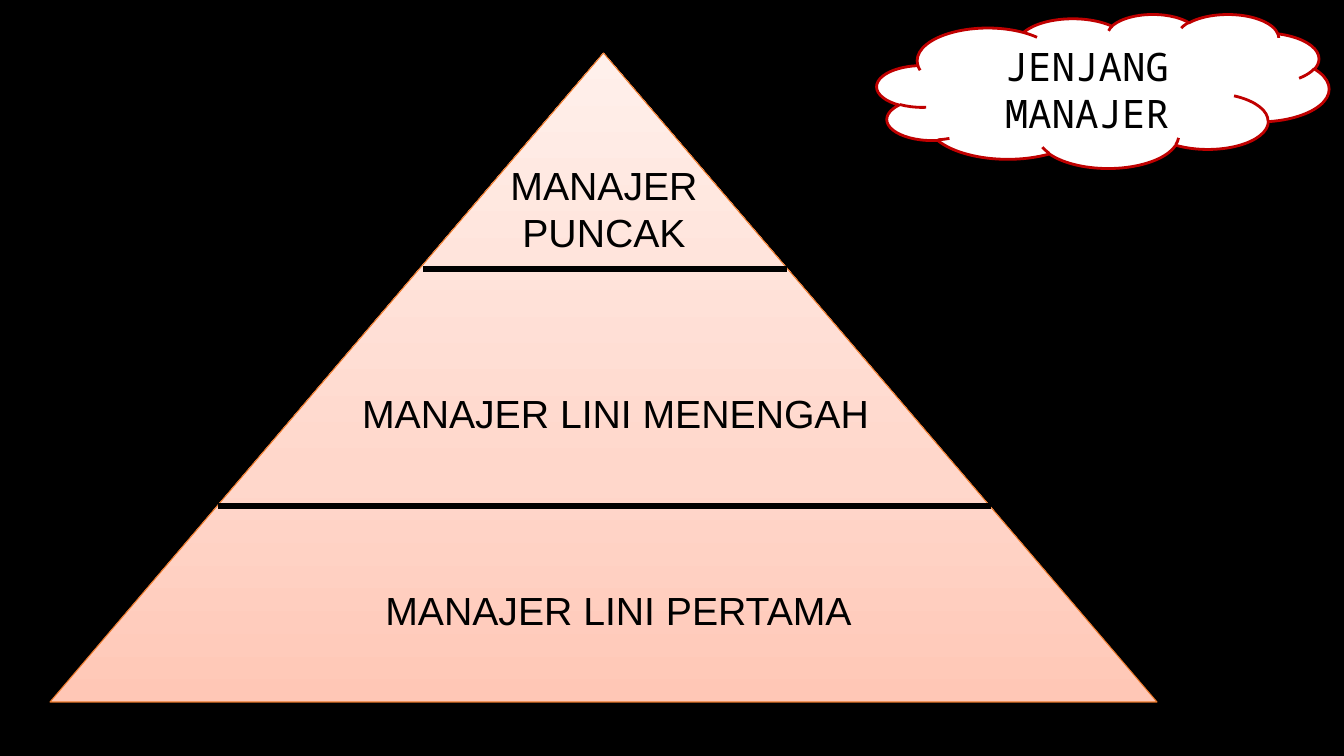
from dataclasses import dataclass

from lxml import etree
from pptx import Presentation
from pptx.dml.color import RGBColor
from pptx.enum.shapes import MSO_CONNECTOR, MSO_SHAPE
from pptx.enum.text import MSO_ANCHOR, MSO_AUTO_SIZE, PP_ALIGN
from pptx.oxml import parse_xml
from pptx.oxml.ns import nsdecls, qn
from pptx.util import Pt

CLOUD = MSO_SHAPE.CLOUD
TRIANGLE = MSO_SHAPE.ISOSCELES_TRIANGLE
STRAIGHT = MSO_CONNECTOR.STRAIGHT
MIDDLE = MSO_ANCHOR.MIDDLE
CENTER = PP_ALIGN.CENTER
NO_AUTOFIT = MSO_AUTO_SIZE.NONE

SLIDE_WIDTH, SLIDE_HEIGHT = 1344, 756
EMU_PER_PX = 12192000 / SLIDE_WIDTH
TITLE_ONLY = 5


@dataclass(frozen=True)
class Theme:
    background: str = "000000"
    ink: str = "000000"
    cloud_fill: str = "FFFFFF"
    cloud_line: str = "C00000"
    pyramid_line: str = "EC792B"
    pyramid_stops: tuple = ((0, "FFC7B6"), (35, "FFD7CB"), (100, "FFF0EB"))
    label_font: str = "Arial"
    title_font: str = "Noto Sans Mono"
    text_size: int = 28


def px(length):
    return round(length * EMU_PER_PX)


def color(value):
    return RGBColor.from_string(value)


def write(shape, text, *, font, size, ink, inset=10):
    """Fill a shape with centred text, one paragraph per line."""
    frame = shape.text_frame
    frame.text = text
    frame.word_wrap = True
    frame.auto_size = NO_AUTOFIT
    frame.vertical_anchor = MIDDLE
    frame.margin_left = frame.margin_right = px(inset)
    for paragraph in frame.paragraphs:
        paragraph.alignment = CENTER
        paragraph.font.name = font
        paragraph.font.size = Pt(size)
        paragraph.font.color.rgb = color(ink)


class SlideBuilder:
    def __init__(self, slide, theme):
        self.slide = slide
        self.theme = theme
        fill = slide.background.fill
        fill.solid()
        fill.fore_color.rgb = color(theme.background)

    def outlined_shape(self, kind, box, line, width):
        shape = self.slide.shapes.add_shape(kind, *map(px, box))
        shape.shadow.inherit = False
        shape.line.color.rgb = color(line)
        shape.line.width = Pt(width)
        return shape

    def cloud(self, box):
        shape = self.outlined_shape(CLOUD, box, self.theme.cloud_line, 2)
        shape.fill.solid()
        shape.fill.fore_color.rgb = color(self.theme.cloud_fill)

    def title(self, text, box):
        title = self.slide.shapes.title
        title.left, title.top, title.width, title.height = map(px, box)
        write(title, text, font=self.theme.title_font,
              size=self.theme.text_size, ink=self.theme.ink, inset=0)
        self.slide.shapes._spTree.append(title._element)  # above the cloud

    def pyramid(self, box):
        shape = self.outlined_shape(TRIANGLE, box, self.theme.pyramid_line, 0.75)
        stops = "".join(
            f'<a:gs pos="{position * 1000}"><a:srgbClr val="{value}"/></a:gs>'
            for position, value in self.theme.pyramid_stops)
        gradient = parse_xml(
            f'<a:gradFill {nsdecls("a")} rotWithShape="1"><a:gsLst>{stops}</a:gsLst>'
            '<a:lin ang="16200000" scaled="0"/></a:gradFill>')
        shape._element.spPr.find(qn("a:prstGeom")).addnext(gradient)

    def divider(self, left, right, y):
        line = self.slide.shapes.add_connector(
            STRAIGHT, px(left), px(y), px(right), px(y))
        line.line.color.rgb = color(self.theme.ink)
        line.line.width = Pt(4.5)
        etree.SubElement(line._element.spPr, qn("a:effectLst"))

    def label(self, text, box):
        write(self.slide.shapes.add_textbox(*map(px, box)), text,
              font=self.theme.label_font, size=self.theme.text_size,
              ink=self.theme.ink)


def main():
    presentation = Presentation()
    presentation.slide_width = px(SLIDE_WIDTH)
    presentation.slide_height = px(SLIDE_HEIGHT)
    slide = presentation.slides.add_slide(presentation.slide_layouts[TITLE_ONLY])
    builder = SlideBuilder(slide, Theme())

    builder.cloud((877, 14, 452, 154))
    builder.title("JENJANG MANAJER", (927, 20, 320, 138))
    builder.pyramid((50, 53, 1107, 649))
    for left, right, y in ((423, 787, 269), (218, 991, 506)):
        builder.divider(left, right, y)
    for text, left, top, width in (
        ("MANAJER LINI PERTAMA", 273, 539, 691),
        ("MANAJER LINI MENENGAH", 270, 342, 691),
        ("MANAJER\nPUNCAK", 381, 137, 446),
    ):
        builder.label(text, (left, top, width, 142))

    presentation.save("out.pptx")


if __name__ == "__main__":
    main()
